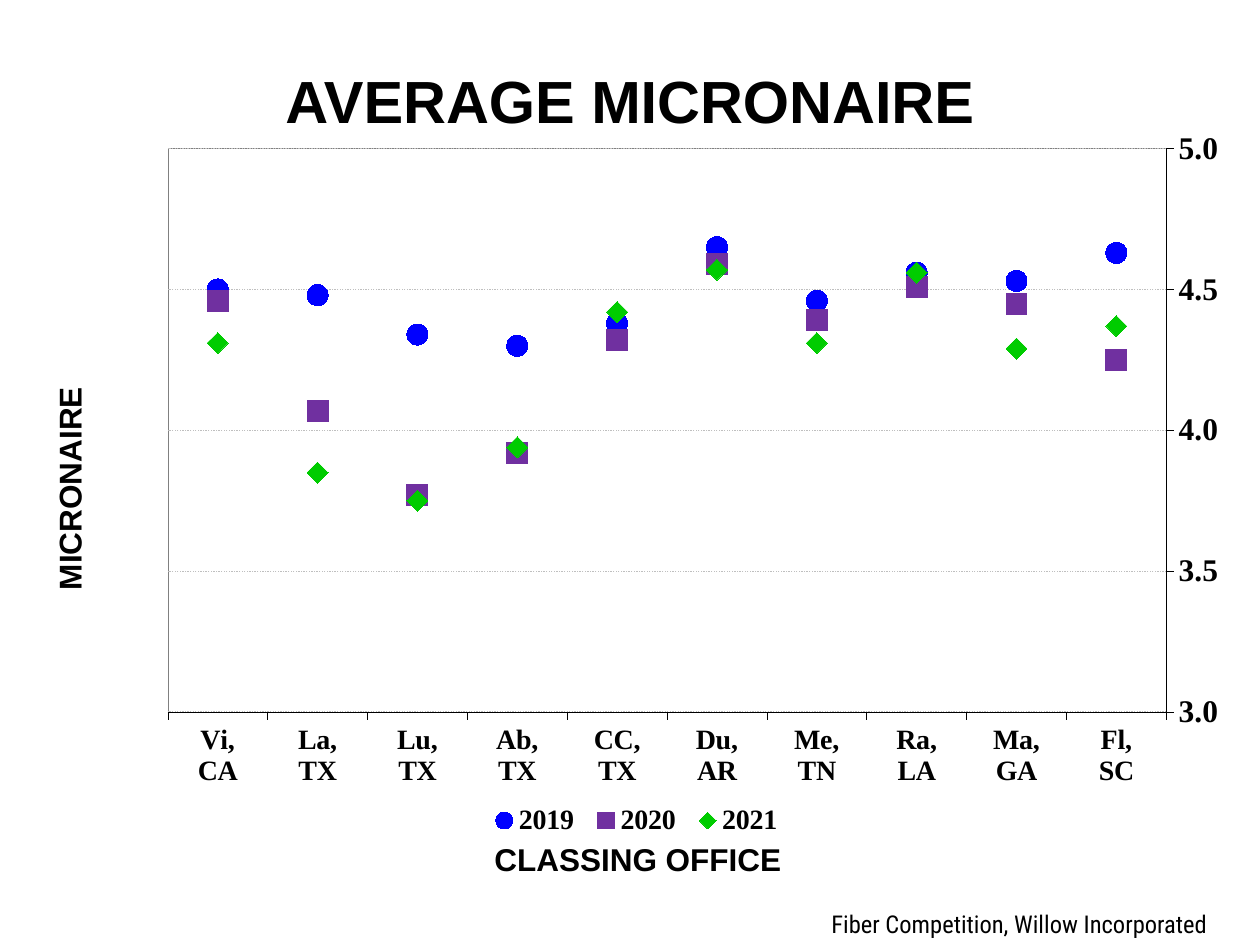
from lxml import etree
from pptx import Presentation
from pptx.chart.data import CategoryChartData
from pptx.dml.color import RGBColor
from pptx.enum.chart import (XL_AXIS_CROSSES, XL_CHART_TYPE, XL_LEGEND_POSITION,
                             XL_MARKER_STYLE, XL_TICK_MARK)
from pptx.enum.dml import MSO_LINE
from pptx.enum.text import MSO_ANCHOR, PP_ALIGN
from pptx.oxml import parse_xml
from pptx.oxml.ns import nsdecls, qn
from pptx.util import Cm, Pt

CENTER, LEFT = PP_ALIGN.CENTER, PP_ALIGN.LEFT
CIRCLE, SQUARE, DIAMOND = (XL_MARKER_STYLE.CIRCLE, XL_MARKER_STYLE.SQUARE,
                           XL_MARKER_STYLE.DIAMOND)
DOTTED = MSO_LINE.ROUND_DOT

# Listed from right to left: the category axis runs in reverse.
OFFICES = ["Fl, SC", "Ma, GA", "Ra, LA", "Me, TN", "Du, AR",
           "CC, TX", "Ab, TX", "Lu, TX", "La, TX", "Vi, CA"]
SERIES = [
    ("2019", CIRCLE, "0000FF",
     [4.63, 4.53, 4.56, 4.46, 4.65, 4.38, 4.3, 4.34, 4.48, 4.5]),
    ("2020", SQUARE, "7030A0",
     [4.25, 4.45, 4.51, 4.39, 4.59, 4.32, 3.92, 3.77, 4.07, 4.46]),
    ("2021", DIAMOND, "00CC00",
     [4.37, 4.29, 4.56, 4.31, 4.57, 4.42, 3.94, 3.75, 3.85, 4.31]),
]


def rgb(value):
    return RGBColor.from_string(value)


def set_font(font, size, name, bold=True):
    font.size, font.name, font.bold = Pt(size), name, bold
    font.color.rgb = rgb("000000")


def add_text(s, box, text, size, font="Arial", bold=True, align=CENTER,
             inset=True, wrap=True, rotation=0):
    """Add a one-line text box and return its run; box is in centimetres."""
    shape = s.shapes.add_textbox(*map(Cm, box))
    shape.rotation = rotation
    tf = shape.text_frame
    tf.text = text
    tf.word_wrap = wrap
    if not inset:
        tf.margin_left = tf.margin_right = tf.margin_top = tf.margin_bottom = 0
    p = tf.paragraphs[0]
    p.alignment = align
    r = p.runs[0]
    set_font(r.font, size, font, bold)
    return r


def add_title(s, box):
    r = add_text(s, box, "AVERAGE MICRONAIRE", 34)
    s.shapes[-1].text_frame.vertical_anchor = MSO_ANCHOR.MIDDLE
    shadow = parse_xml(
        f'<a:effectLst {nsdecls("a")}><a:outerShdw blurRad="38100" dist="38100" '
        'dir="2700000" algn="tl"><a:srgbClr val="808080"/></a:outerShdw></a:effectLst>')
    r.font._element.find(qn("a:solidFill")).addnext(shadow)


def manual_layout(x, y, w, h, inner=False):
    """Return a chart layout element; lengths are fractions of the chart."""
    layout = etree.Element(qn("c:layout"))
    manual = etree.SubElement(layout, qn("c:manualLayout"))
    items = [("layoutTarget", "inner")] if inner else []
    items += [("xMode", "edge"), ("yMode", "edge"),
              ("x", x), ("y", y), ("w", w), ("h", h)]
    for tag, value in items:
        etree.SubElement(manual, qn(f"c:{tag}")).set("val", str(value))
    return layout


def drop_layout(element):
    for old in element.findall(qn("c:layout")):
        element.remove(old)


def style_axis(axis, size):
    set_font(axis.tick_labels.font, size, "Times New Roman")
    axis.major_tick_mark = XL_TICK_MARK.OUTSIDE
    axis.minor_tick_mark = XL_TICK_MARK.NONE
    axis.format.line.color.rgb = rgb("000000")
    axis.format.line.width = Pt(0.25)


def style_axes(chart):
    offices, values = chart.category_axis, chart.value_axis
    style_axis(offices, 16)
    offices.reverse_order = True
    offices.crosses = XL_AXIS_CROSSES.MAXIMUM

    style_axis(values, 18)
    values.format.line.dash_style = DOTTED
    values.minimum_scale, values.maximum_scale, values.major_unit = 3, 5, 0.5
    values.tick_labels.number_format = "#,##0.0"
    values.tick_labels.number_format_is_linked = False
    values.has_major_gridlines = True
    grid = values.major_gridlines.format.line
    grid.color.rgb = rgb("BFBFBF")
    grid.width = Pt(0.75)
    grid.dash_style = DOTTED


def style_plot_area(chart):
    area = chart._chartSpace.chart.plotArea
    drop_layout(area)
    area.insert(0, manual_layout(0.107, 0.16, 0.837, 0.65, inner=True))
    area.append(parse_xml(
        f'<c:spPr {nsdecls("c", "a")}><a:noFill/><a:ln w="3175"><a:solidFill>'
        '<a:srgbClr val="808080"/></a:solidFill></a:ln></c:spPr>'))


def style_legend(chart):
    chart.has_legend = True
    legend = chart.legend
    legend.position = XL_LEGEND_POSITION.BOTTOM
    legend.include_in_layout = False
    set_font(legend.font, 16, "Times New Roman")
    element = legend._element
    drop_layout(element)
    element.find(qn("c:legendPos")).addnext(manual_layout(0.37, 0.91, 0.26, 0.05))


def add_micronaire_chart(s, box):
    data = CategoryChartData(number_format="0.00")
    data.categories = [office.replace(" ", "\n") for office in OFFICES]
    for name, _, _, values in SERIES:
        data.add_series(name, values)
    chart = s.shapes.add_chart(XL_CHART_TYPE.LINE_MARKERS, *map(Cm, box), data).chart
    chart.has_title = False
    set_font(chart.font, 10, "Times New Roman", bold=False)
    chart.plots[0].vary_by_categories = False
    for series, (_, style, color, _) in zip(chart.plots[0].series, SERIES):
        series.smooth = False
        series.format.line.fill.background()
        marker = series.marker
        marker.style, marker.size = style, 12
        marker.format.fill.solid()
        marker.format.fill.fore_color.rgb = rgb(color)
        marker.format.line.color.rgb = rgb(color)
    style_axes(chart)
    style_plot_area(chart)
    style_legend(chart)


def add_axis_titles(s, across, upright):
    add_text(s, across, "CLASSING OFFICE", 18, inset=False, wrap=False)
    add_text(s, upright, "MICRONAIRE", 18, inset=False, wrap=False, rotation=270)


def main():
    prs = Presentation()
    prs.slide_width, prs.slide_height = Cm(25.4), Cm(19.05)
    s = prs.slides.add_slide(prs.slide_layouts[6])
    add_micronaire_chart(s, (0.81, 0.2, 24.05, 17.48))
    add_title(s, (1.9, 0.43, 21.6, 3.18))
    add_axis_titles(s, (9.96, 16.94, 5.8, 0.76), (-0.66, 9.47, 4.1, 0.76))
    add_text(s, (16.51, 18.21, 8.89, 0.84), "Fiber Competition, Willow Incorporated",
             14, "Roboto Condensed", bold=False, align=LEFT)
    prs.save("out.pptx")


if __name__ == "__main__":
    main()
